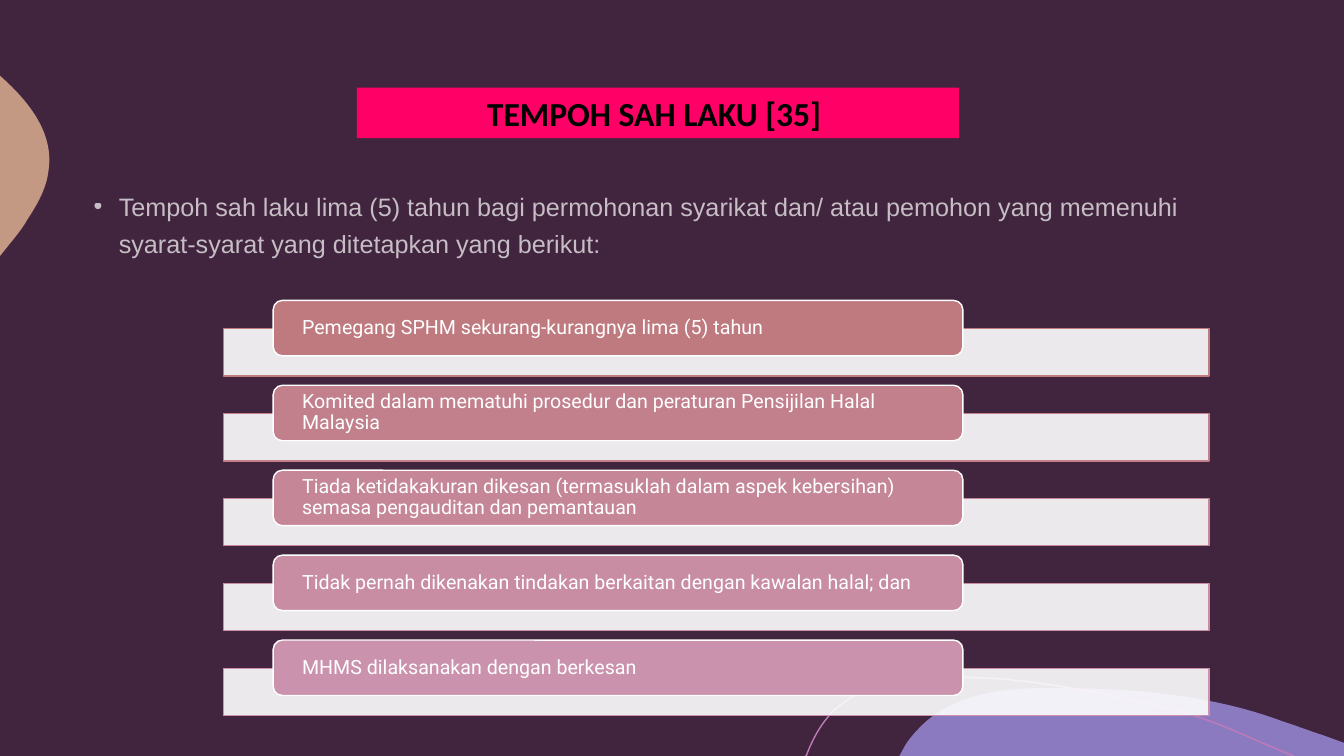
from lxml import etree
from pptx import Presentation
from pptx.dml.color import RGBColor
from pptx.enum.shapes import MSO_SHAPE
from pptx.enum.text import MSO_ANCHOR, MSO_AUTO_SIZE, PP_ALIGN
from pptx.oxml.ns import qn
from pptx.util import Inches, Pt

# Content
TITLE = "TEMPOH SAH LAKU [35] "
INTRO = ("Tempoh sah laku lima (5) tahun bagi permohonan syarikat dan/ atau pemohon "
         "yang memenuhi syarat-syarat yang ditetapkan yang berikut:")
CONDITIONS = [
    ("Pemegang SPHM sekurang-kurangnya lima (5) tahun", "BF7A7F"),
    ("Komited dalam mematuhi prosedur dan peraturan Pensijilan Halal Malaysia", "C2808C"),
    ("Tiada ketidakakuran dikesan (termasuklah dalam aspek kebersihan) "
     "semasa pengauditan dan pemantauan", "C58698"),
    ("Tidak pernah dikenakan tindakan berkaitan dengan kawalan halal; dan", "C88CA3"),
    ("MHMS dilaksanakan dengan berkesan", "CB92AE"),
]

# Decorative outlines: start point, then 2 numbers for a line, 6 for a Bézier curve
PURPLE_HILL = [
    (10.54, 6.83), (11.28, 6.83, 12.04, 6.9, 12.73, 7.16),
    (12.86, 7.2, 12.98, 7.25, 13.11, 7.29), (13.33, 7.37), (13.33, 7.5),
    (8.92, 7.5), (8.98, 7.39), (9.02, 7.33, 9.06, 7.28, 9.11, 7.23),
    (9.39, 6.93, 9.82, 6.84, 10.23, 6.83), (10.33, 6.83, 10.43, 6.83, 10.54, 6.83),
]
TAN_BLOB = [
    (0, 0.75), (0.01, 0.76), (0.3, 1.02, 0.54, 1.33, 0.48, 1.7),
    (0.46, 1.87, 0.37, 2.03, 0.27, 2.18), (0.24, 2.24, 0.17, 2.33, 0.08, 2.44), (0, 2.54),
]
PINK_CURVE = [
    (7.99, 7.5), (8, 7.49), (8.06, 7.33, 8.14, 7.19, 8.24, 7.08),
    (8.5, 6.81, 8.89, 6.73, 9.26, 6.72), (9.55, 6.72),
    (10.22, 6.72, 11, 6.89, 11.55, 7.02), (12.09, 7.15, 12.26, 7.27, 12.83, 7.5),
]

# List grid, in inches
FIRST_ROW, LAST_ROW = 2.98, 6.35
ROW_STEP = (LAST_ROW - FIRST_ROW) / (len(CONDITIONS) - 1)
BAR_LEFT, BAR_DROP, BAR_WIDTH, BAR_HEIGHT = 2.22, 0.28, 9.77, 0.47
PILL_LEFT, PILL_WIDTH, PILL_HEIGHT = 2.71, 6.84, 0.55


def color(value):
    return RGBColor.from_string(value)


def set_alpha(fill_parent, percent):
    tint = fill_parent.find(".//" + qn("a:srgbClr"))
    etree.SubElement(tint, qn("a:alpha")).set("val", str(percent * 1000))


def paint(shape, fill=None, line=None):
    shape.shadow.inherit = False
    if fill:
        shape.fill.solid()
        shape.fill.fore_color.rgb = color(fill)
    else:
        shape.fill.background()
    if line:
        shape.line.color.rgb = color(line)
        shape.line.width = Pt(1)
    else:
        shape.line.fill.background()


def add_span(para, text, size, font, tint, bold=False):
    span = para.add_run()
    span.text = text
    span.font.size, span.font.name, span.font.bold = Pt(size), font, bold
    span.font.color.rgb = color(tint)
    return span


def add_box(page, kind, left, top, width, height, fill, line):
    box = page.shapes.add_shape(kind, *map(Inches, (left, top, width, height)))
    paint(box, fill, line)
    return box


def add_outline(page, outline, fill=None, line=None):
    anchors = [(Inches(step[-2]), Inches(step[-1])) for step in outline]
    builder = page.shapes.build_freeform(*anchors[0])
    builder.add_line_segments(anchors[1:], close=False)
    shape = builder.convert_to_shape()
    paint(shape, fill, line)
    # Bend the straight segments that have control points
    segments = list(shape._element.iter(qn("a:lnTo")))
    for segment, step in zip(segments, outline[1:]):
        if len(step) == 6:
            segment.tag = qn("a:cubicBezTo")
            for place, (x, y) in enumerate((step[:2], step[2:4])):
                point = etree.Element(qn("a:pt"))
                point.set("x", str(Inches(x) - shape.left))
                point.set("y", str(Inches(y) - shape.top))
                segment.insert(place, point)
    if fill:
        etree.SubElement(segments[0].getparent(), qn("a:close"))


def add_title(page):
    title = page.shapes.title
    title.left, title.top, title.width, title.height = map(Inches, (3.54, 0.87, 5.97, 0.5))
    title.fill.solid()
    title.fill.fore_color.rgb = color("FF0066")
    frame = title.text_frame
    frame.auto_size = MSO_AUTO_SIZE.NONE
    frame.vertical_anchor = MSO_ANCHOR.TOP
    para = frame.paragraphs[0]
    para.alignment = PP_ALIGN.CENTER
    add_span(para, TITLE, 24, "Calibri", "000000", bold=True)


def add_intro(page):
    box = page.shapes.add_textbox(*map(Inches, (0.83, 1.77, 11.67, 0.98)))
    box.text_frame.word_wrap = True
    para = box.text_frame.paragraphs[0]
    para.line_spacing, para.space_before = 1.25, Pt(10)
    span = add_span(para, INTRO, 18, "Arial", "FFFFFF")
    set_alpha(span.font._element, 70)
    # Hanging bullet
    props = para._p.get_or_add_pPr()
    props.set("marL", str(Inches(0.25)))
    props.set("indent", str(Inches(-0.25)))
    etree.SubElement(props, qn("a:buFont")).set("typeface", "Arial")
    etree.SubElement(props, qn("a:buChar")).set("char", "•")


def add_condition(page, row, text, tint):
    top = FIRST_ROW + row * ROW_STEP
    bar = add_box(page, MSO_SHAPE.RECTANGLE, BAR_LEFT, top + BAR_DROP,
                  BAR_WIDTH, BAR_HEIGHT, "FFFFFF", tint)
    set_alpha(bar._element.spPr.find(qn("a:solidFill")), 90)
    pill = add_box(page, MSO_SHAPE.ROUNDED_RECTANGLE, PILL_LEFT, top,
                   PILL_WIDTH, PILL_HEIGHT, tint, "FFFFFF")
    frame = pill.text_frame
    frame.word_wrap = True
    frame.vertical_anchor = MSO_ANCHOR.MIDDLE
    frame.margin_left = frame.margin_right = Inches(0.26)
    frame.margin_top = frame.margin_bottom = 0
    para = frame.paragraphs[0]
    para.alignment, para.line_spacing = PP_ALIGN.LEFT, 0.9
    add_span(para, text, 14, "Roboto", "FFFFFF")


def main():
    deck = Presentation()
    deck.slide_width, deck.slide_height = Inches(13.33), Inches(7.5)
    page = deck.slides.add_slide(deck.slide_layouts[5])
    page.background.fill.solid()
    page.background.fill.fore_color.rgb = color("41243E")

    # Decoration, behind the list
    add_outline(page, PURPLE_HILL, fill="8B7ABF")
    add_outline(page, TAN_BLOB, fill="C39983")
    add_outline(page, PINK_CURVE, line="BF7AB9")

    # Title, introduction and list of conditions
    add_title(page)
    add_intro(page)
    for row, (text, tint) in enumerate(CONDITIONS):
        add_condition(page, row, text, tint)
    deck.save("out.pptx")


if __name__ == "__main__":
    main()
